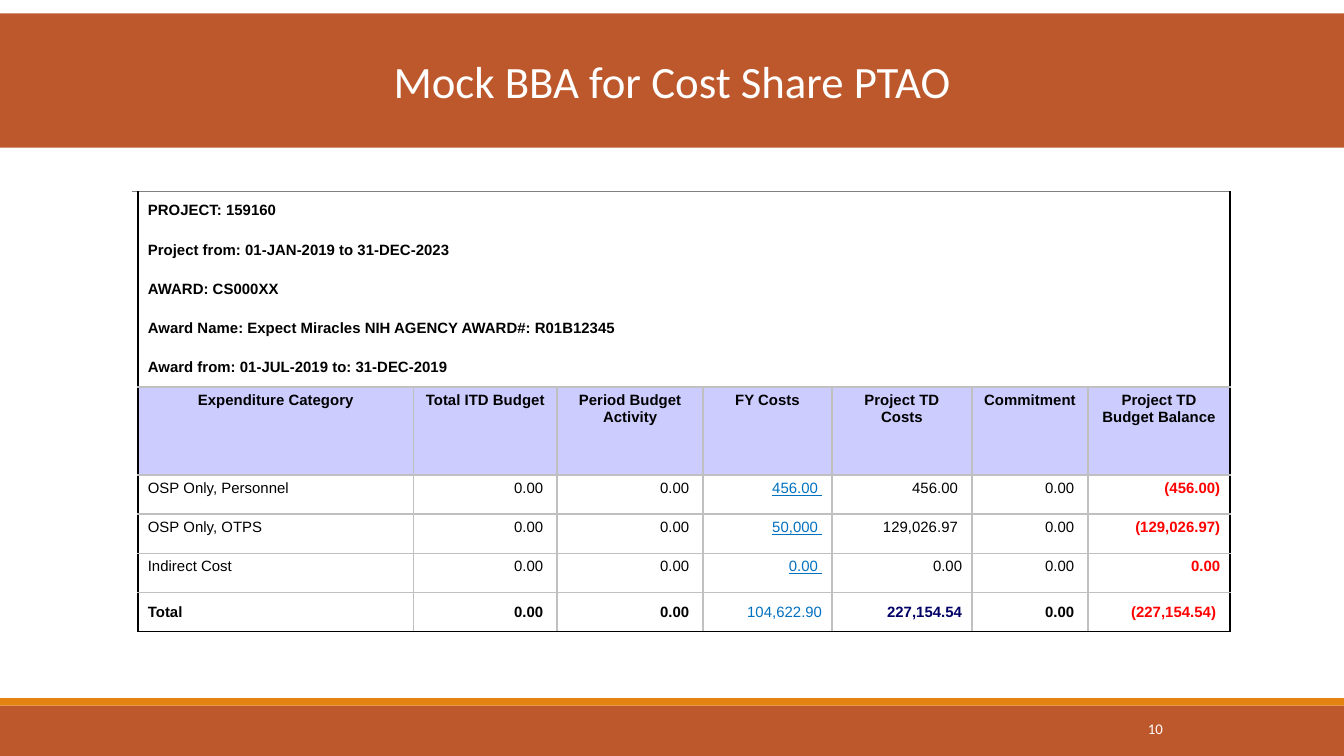
import dataclasses
import typing

import lxml.etree
import pptx
import pptx.dml.color
import pptx.enum.shapes
import pptx.enum.text
import pptx.oxml
import pptx.oxml.ns
import pptx.util

Pt = pptx.util.Pt
Align = pptx.enum.text.PP_ALIGN
Anchor = pptx.enum.text.MSO_ANCHOR

COLOURS = {
    "rust": "BD582C", "orange": "E48312", "white": "FFFFFF", "black": "000000",
    "grey": "808080", "silver": "C0C0C0", "lavender": "CCCCFF",
    "blue": "0070C0", "navy": "000066", "red": "FF0000",
}
NO_STYLE = "{2D5ABB26-0587-4C30-8999-92F81FD0307C}"


@dataclasses.dataclass(frozen=True)
class Bar:
    top: float
    height: float
    colour: str


@dataclasses.dataclass(frozen=True)
class Style:
    size: float = 8
    font: str = "Arial"
    colour: str = "black"
    bold: bool = False
    underline: bool = False


PLAIN = Style()
BOLD = Style(bold=True)
LINKED = Style(colour="blue", underline=True)
NEGATIVE = Style(colour="red", bold=True)

FOOTER = Bar(378, 27, "rust")
STRIPE = Bar(374, 4, "orange")
TITLE = Bar(7.2, 72, "rust")

# Table content
BANNER = [
    "PROJECT: 159160",
    "Project from: 01-JAN-2019 to 31-DEC-2023",
    "AWARD: CS000XX",
    "Award Name: Expect Miracles NIH AGENCY AWARD#: R01B12345",
    "Award from: 01-JUL-2019 to: 31-DEC-2019",
]
HEADINGS = ["Expenditure Category", "Total ITD Budget", "Period Budget Activity",
            "FY Costs", "Project TD Costs", "Commitment", "Project TD Budget Balance"]
EXPENSES = [
    ["OSP Only, Personnel", "0.00 ", "0.00 ", "456.00 ", "456.00 ", "0.00 ", "(456.00)"],
    ["OSP Only, OTPS", "0.00 ", "0.00 ", "50,000 ", "129,026.97 ", "0.00 ", "(129,026.97)"],
    ["Indirect Cost", "0.00 ", "0.00 ", "0.00 ", "0.00", "0.00 ", "0.00"],
]
TOTALS = ["Total", "0.00 ", "0.00 ", "104,622.90", "227,154.54", "0.00 ", "(227,154.54) "]
EXPENSE_STYLES = [PLAIN, PLAIN, PLAIN, LINKED, PLAIN, PLAIN, NEGATIVE]
TOTAL_STYLES = [BOLD, BOLD, BOLD, Style(colour="blue"),
                Style(colour="navy", bold=True), BOLD, NEGATIVE]

COLUMN_WIDTHS = [147.5, 77, 78.2, 69, 75, 62.3, 76]
ROW_HEIGHT, HEADING_HEIGHT = 21, 47.2
LAST_COLUMN = len(HEADINGS) - 1


def rgb(name: str) -> pptx.dml.color.RGBColor:
    return pptx.dml.color.RGBColor.from_string(COLOURS[name])


def write(frame, text: str, style: Style, align, anchor) -> None:
    frame.word_wrap = True
    frame.vertical_anchor = anchor
    para = frame.paragraphs[0]
    para.alignment = align
    span = para.add_run()
    span.text = text
    span.font.size = Pt(style.size)
    span.font.name = style.font
    span.font.bold = style.bold
    span.font.underline = style.underline
    span.font.color.rgb = rgb(style.colour)


def add_bar(page, bar: Bar):
    box = page.shapes.add_shape(pptx.enum.shapes.MSO_SHAPE.RECTANGLE,
                                Pt(0), Pt(bar.top), Pt(720), Pt(bar.height))
    box.shadow.inherit = False
    box.fill.solid()
    box.fill.fore_color.rgb = rgb(bar.colour)
    box.line.fill.background()
    return box


def add_rule(page, left: float, right: float, top: float) -> None:
    rule = page.shapes.add_connector(pptx.enum.shapes.MSO_CONNECTOR.STRAIGHT,
                                     Pt(left), Pt(top), Pt(right), Pt(top))
    rule.line.color.rgb = rgb("grey")
    rule.line.width = Pt(0.5)
    lxml.etree.SubElement(rule._element.spPr, pptx.oxml.ns.qn("a:effectLst"))


def set_borders(cell, sides: typing.Dict[str, str]) -> None:
    """Draw one-point borders on the sides L, R, T and B that are given."""
    properties = cell._tc.get_or_add_tcPr()
    for side in "LRTB":
        if side in sides:
            properties.append(pptx.oxml.parse_xml(
                f'<a:ln{side} {pptx.oxml.ns.nsdecls("a")} w="{Pt(1)}"><a:solidFill>'
                f'<a:srgbClr val="{COLOURS[sides[side]]}"/></a:solidFill></a:ln{side}>'))


def fill_cell(cell, text: str, style: Style, align, anchor,
              sides: typing.Dict[str, str], fill: typing.Optional[str] = None) -> None:
    cell.margin_left = cell.margin_right = Pt(5.2)
    cell.margin_top = cell.margin_bottom = Pt(2.6)
    write(cell.text_frame, text, style, align, anchor)
    cell.vertical_anchor = anchor
    set_borders(cell, sides)
    if fill:
        cell.fill.solid()
        cell.fill.fore_color.rgb = rgb(fill)
    else:
        cell.fill.background()


def fill_row(table, row: int, texts: typing.List[str], styles: typing.List[Style],
             aligns: list, anchor, bottom: str = "silver",
             fill: typing.Optional[str] = None) -> None:
    for column, (text, style, align) in enumerate(zip(texts, styles, aligns)):
        sides = {"L": "silver" if column else "black",
                 "R": "black" if column == LAST_COLUMN else "silver",
                 "T": "silver", "B": bottom}
        fill_cell(table.cell(row, column), text, style, align, anchor, sides, fill)


def add_budget_table(page) -> None:
    heights = [ROW_HEIGHT] * len(BANNER) + [HEADING_HEIGHT] + [ROW_HEIGHT] * (len(EXPENSES) + 1)
    holder = page.shapes.add_table(len(heights), len(HEADINGS), Pt(74), Pt(102.4),
                                   Pt(sum(COLUMN_WIDTHS)), Pt(sum(heights)))
    table = holder.table
    table.first_row = table.horz_banding = False
    table._tbl.tblPr.find(pptx.oxml.ns.qn("a:tableStyleId")).text = NO_STYLE
    for column, width in zip(table.columns, COLUMN_WIDTHS):
        column.width = Pt(width)
    for row, height in zip(table.rows, heights):
        row.height = Pt(height)

    # Project and award lines across the full width
    for row, text in enumerate(BANNER):
        sides = {"L": "black", "R": "black"}
        if row == len(BANNER) - 1:
            sides["B"] = "silver"
        first, last = table.cell(row, 0), table.cell(row, LAST_COLUMN)
        first.merge(last)
        fill_cell(first, text, BOLD, Align.LEFT, Anchor.MIDDLE, sides)
        set_borders(last, {"R": "black"})

    # Headings, expenses and totals
    heading_row = len(BANNER)
    number_aligns = [Align.LEFT] + [Align.RIGHT] * LAST_COLUMN
    fill_row(table, heading_row, HEADINGS, [BOLD] * len(HEADINGS),
             [Align.CENTER] * len(HEADINGS), Anchor.TOP, fill="lavender")
    for row, texts in enumerate(EXPENSES, heading_row + 1):
        fill_row(table, row, texts, EXPENSE_STYLES, number_aligns, Anchor.TOP)
    fill_row(table, len(heights) - 1, TOTALS, TOTAL_STYLES, number_aligns,
             Anchor.MIDDLE, bottom="black")


def main() -> None:
    deck = pptx.Presentation()
    deck.slide_width, deck.slide_height = Pt(720), Pt(405)
    page = deck.slides.add_slide(deck.slide_layouts[6])

    # Footer bars and the rule above the table
    add_bar(page, FOOTER)
    add_bar(page, STRIPE)
    add_rule(page, 70.6, 659, 102.6)

    add_budget_table(page)

    # Page number
    number = page.shapes.add_textbox(Pt(595.4), Pt(376), Pt(34.6), Pt(28.8))
    write(number.text_frame, "10", Style(7.9, "Calibri", "white"), Align.RIGHT, Anchor.MIDDLE)

    # Title band
    title = add_bar(page, TITLE)
    write(title.text_frame, "Mock BBA for Cost Share PTAO",
          Style(24, "Calibri", "white"), Align.CENTER, Anchor.MIDDLE)

    deck.save("out.pptx")


if __name__ == "__main__":
    main()
